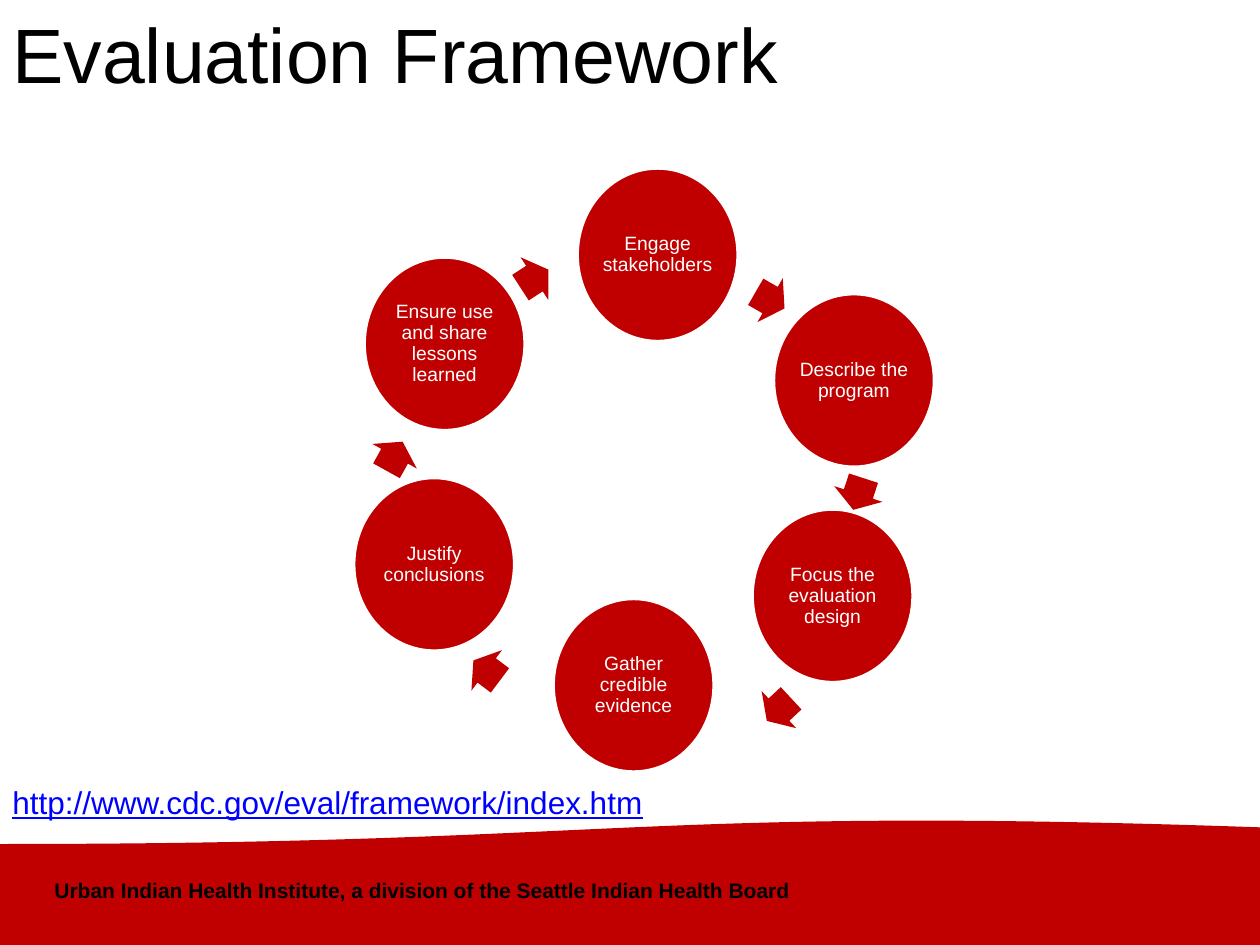
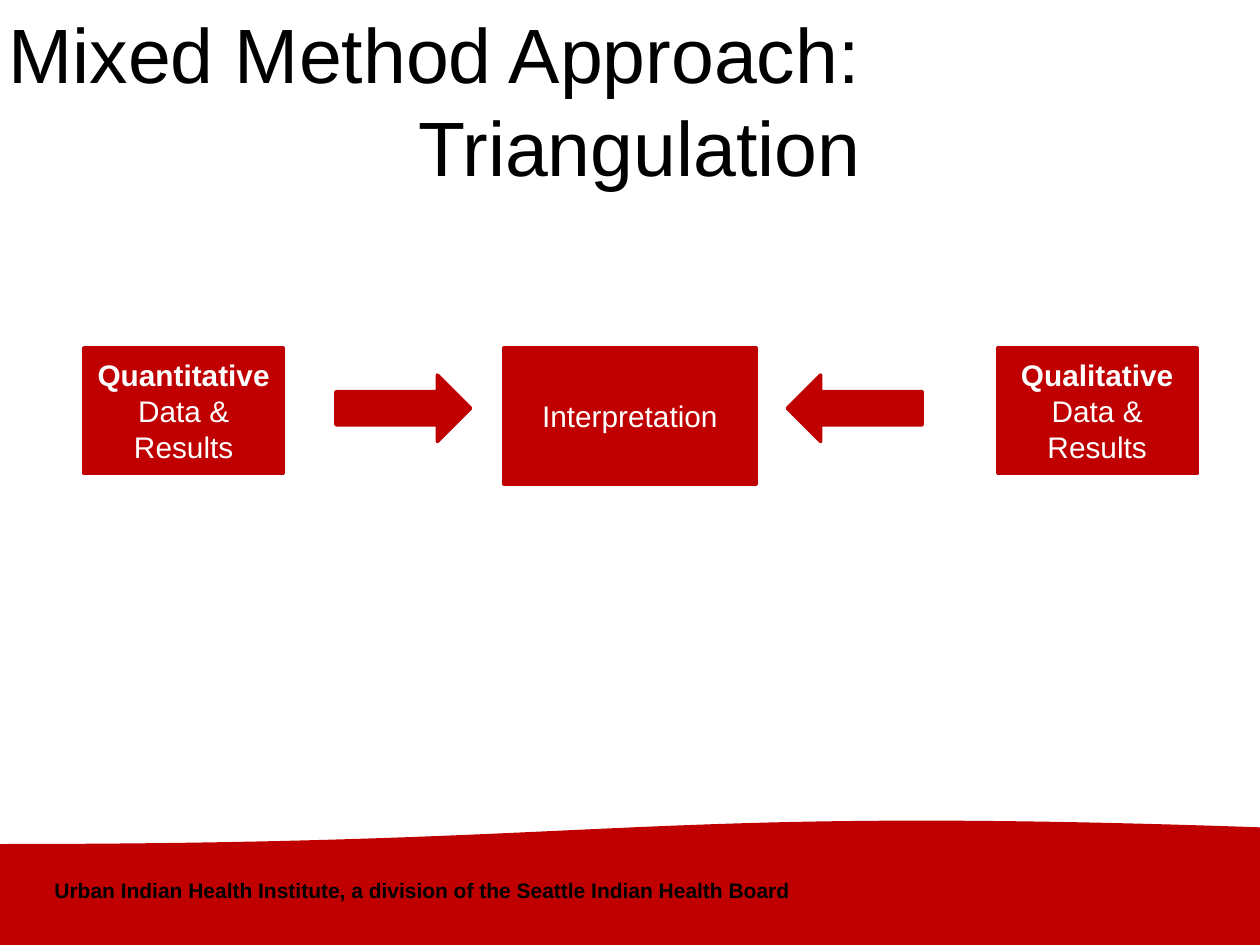
"""Build two slides: an evaluation cycle and a mixed method diagram."""
from dataclasses import dataclass

from pptx import Presentation
from pptx.dml.color import RGBColor
from pptx.enum.shapes import MSO_SHAPE
from pptx.enum.text import MSO_ANCHOR, PP_ALIGN
from pptx.util import Pt


@dataclass(frozen=True)
class Theme:
    font: str = "Arial"
    red: RGBColor = RGBColor(0xC0, 0, 0)
    white: RGBColor = RGBColor(0xFF, 0xFF, 0xFF)
    black: RGBColor = RGBColor(0, 0, 0)
    blue: RGBColor = RGBColor(0, 0, 0xFF)
    title: int = 44
    link: int = 18
    box: int = 17
    foot: int = 12
    step: int = 11
    edge: int = 2


THEME = Theme()

STEPS = [
    ("Engage stakeholders", 329.8, 96),
    ("Describe the program", 442, 167.8),
    ("Focus the evaluation design", 429.8, 290.9),
    ("Gather credible evidence", 316.1, 342),
    ("Justify conclusions", 202.1, 272.9),
    ("Ensure use and share lessons learned", 208.1, 146.9),
]
TURNS = [
    (430.6, 157, 30),
    (481, 267.8, 108),
    (435.6, 391, 137),
    (268.6, 368.6, 217),
    (216, 246.2, 299),
    (295.9, 144.7, 327),
]


def style(para, size, color, align=PP_ALIGN.LEFT, pitch=None):
    para.alignment = align
    if pitch:
        para.line_spacing = Pt(pitch)
    font = para.font
    font.name, font.size, font.color.rgb = THEME.font, Pt(size), color
    return font


def add_text(slide, lines, left, top, width, height, size, color, **look):
    box = slide.shapes.add_textbox(Pt(left), Pt(top), Pt(width), Pt(height))
    frame = box.text_frame
    frame.word_wrap = True
    frame.text = "\n".join(lines)
    for para in frame.paragraphs:
        style(para, size, color, **look)
    return frame


def add_form(slide, kind, left, top, width, height, edge=None):
    form = slide.shapes.add_shape(kind, Pt(left), Pt(top), Pt(width), Pt(height))
    form.shadow.inherit = False
    form.fill.solid()
    form.fill.fore_color.rgb = THEME.red
    if edge is None:
        form.line.fill.background()
    else:
        form.line.color.rgb = edge
        form.line.width = Pt(THEME.edge)
    return form


def label(form, parts, size, pitch):
    frame = form.text_frame
    frame.word_wrap = True
    frame.vertical_anchor = MSO_ANCHOR.MIDDLE
    para = frame.paragraphs[0]
    style(para, size, THEME.white, PP_ALIGN.CENTER, pitch)
    for text, bold in parts:
        run = para.add_run()
        run.text = text
        run.font.bold = bold
    return frame


def add_step(slide, text, left, top):
    form = add_form(slide, MSO_SHAPE.OVAL, left, top, 92, 99.2, THEME.white)
    frame = label(form, [(text, False)], THEME.step, 12)
    frame.margin_left = frame.margin_right = 0
    frame.margin_top = frame.margin_bottom = 0


def add_turn(slide, left, top, angle):
    form = add_form(slide, MSO_SHAPE.RIGHT_ARROW, left, top, 19, 29)
    form.adjustments[0], form.adjustments[1] = 0.6, 0.5
    form.rotation = angle


def add_box(slide, parts, left, width, height):
    form = add_form(slide, MSO_SHAPE.RECTANGLE, left, 198.7, width, height, THEME.red)
    label(form, parts, THEME.box, 20.5)


def add_title(slide, lines, width, height, align=PP_ALIGN.LEFT):
    return add_text(slide, lines, 0, 0, width, height, THEME.title, THEME.black,
                    align=align, pitch=53)


def add_page(deck):
    slide = deck.slides.add_slide(deck.slide_layouts[6])
    band = add_form(slide, MSO_SHAPE.FLOWCHART_DOCUMENT, 0, 468, 720, 72)
    band.rotation = 180
    foot = "Urban Indian Health Institute, a division of the Seattle Indian Health Board"
    frame = add_text(slide, [foot], 24, 498, 450, 21.6, THEME.foot, THEME.black)
    frame.paragraphs[0].font.bold = True
    return slide


def add_cycle(deck):
    slide = add_page(deck)
    add_title(slide, ["Evaluation Framework"], 684, 96)
    for step in STEPS:
        add_step(slide, *step)
    for turn in TURNS:
        add_turn(slide, *turn)
    frame = add_text(slide, ["http://www.cdc.gov/eval/framework/index.htm"],
                     0, 444, 380, 29, THEME.link, THEME.blue)
    frame.paragraphs[0].font.underline = True


def add_mix(deck):
    slide = add_page(deck)
    frame = add_title(slide, ["Mixed Method Approach:", "Triangulation"],
                      499, 126, PP_ALIGN.RIGHT)
    frame.margin_left = 0
    for name, left in (("Quantitative", 48), ("Qualitative", 570)):
        add_box(slide, [(name, True), (" Data & Results", False)], left, 114, 72)
    for kind, left in ((MSO_SHAPE.RIGHT_ARROW, 192), (MSO_SHAPE.LEFT_ARROW, 450)):
        add_form(slide, kind, left, 214.3, 77, 38, THEME.red)
    add_box(slide, [("Interpretation", False)], 288, 144, 77.8)


def main():
    deck = Presentation()
    deck.slide_width, deck.slide_height = Pt(720), Pt(540)
    add_cycle(deck)
    add_mix(deck)
    deck.save("out.pptx")


if __name__ == "__main__":
    main()
